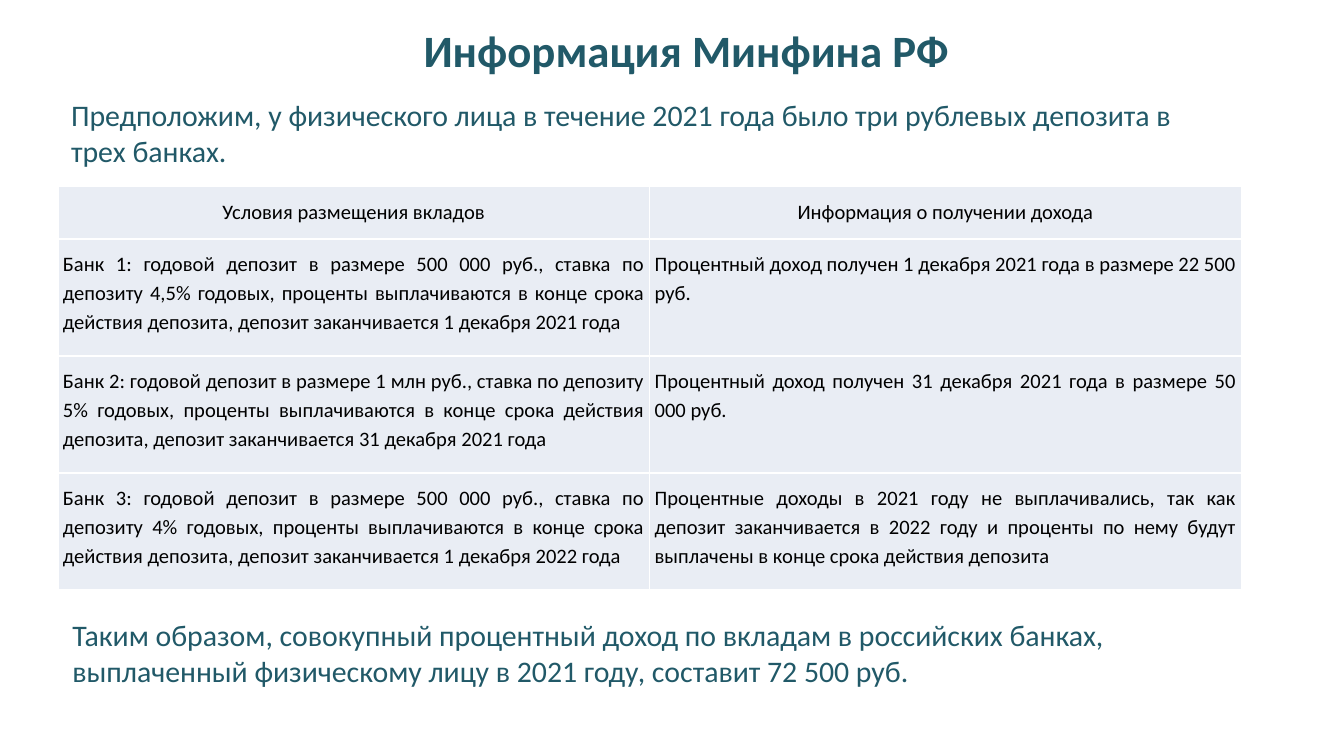
from lxml.etree import SubElement
from pptx import Presentation
from pptx.dml.color import RGBColor as RGB
from pptx.enum.text import MSO_AUTO_SIZE as AutoSize, PP_ALIGN as Align
from pptx.oxml.ns import qn
from pptx.util import Pt

THEME = {
    "font": "Calibri",
    "teal": RGB.from_string("215968"),
    "black": RGB.from_string("000000"),
    "cell": RGB.from_string("E9EDF4"),
    "border": "FFFFFF",
    "title": 24,
    "body": 16,
    "table": 11,
}

TITLE = "Информация Минфина РФ"
INTRO = ("Предположим, у физического лица в течение 2021 года "
         "было три рублевых депозита в трех банках.")
SUMMARY = ("Таким образом, совокупный процентный доход по вкладам в российских банках, "
           "выплаченный физическому лицу в 2021 году, составит 72 500 руб.")
HEADER = ("Условия размещения вкладов", "Информация о получении дохода")
DEPOSITS = [
    ("Банк 1: годовой депозит в размере 500 000 руб., ставка по депозиту 4,5% годовых, "
     "проценты выплачиваются в конце срока действия депозита, "
     "депозит заканчивается 1 декабря 2021 года",
     "Процентный доход получен 1 декабря 2021 года в размере 22 500 руб."),
    ("Банк 2: годовой депозит в размере 1 млн руб., ставка по депозиту 5% годовых, "
     "проценты выплачиваются в конце срока действия депозита, "
     "депозит заканчивается 31 декабря 2021 года",
     "Процентный доход получен 31 декабря 2021 года в размере 50 000 руб."),
    ("Банк 3: годовой депозит в размере 500 000 руб., ставка по депозиту 4% годовых, "
     "проценты выплачиваются в конце срока действия депозита, "
     "депозит заканчивается 1 декабря 2022 года",
     "Процентные доходы в 2021 году не выплачивались, так как депозит заканчивается "
     "в 2022 году и проценты по нему будут выплачены в конце срока действия депозита"),
]

# left, top, width, height in points
TITLE_BOX = (218.2, 8.5, 298.8, 36.3)
INTRO_BOX = (31, 48.5, 620.6, 46)
SUMMARY_BOX = (31.7, 327, 634, 46)
TABLE_LEFT, TABLE_TOP, TABLE_WIDTH = 31, 100, 634
HEADER_HEIGHT, ROW_HEIGHT = 28, 62.7
CELL_PAD_X, CELL_PAD_Y = 2.7, 5


def style(p, size, color, bold=False):
    p.font.name = THEME["font"]
    p.font.size = Pt(size)
    p.font.color.rgb = color
    p.font.bold = bold


def add_text(slide, text, box, size, align=Align.LEFT, bold=False, wrap=True):
    tf = slide.shapes.add_textbox(*map(Pt, box)).text_frame
    tf.word_wrap = wrap
    tf.auto_size = AutoSize.SHAPE_TO_FIT_TEXT
    p = tf.paragraphs[0]
    p.text, p.alignment = text, align
    style(p, size, THEME["teal"], bold)


def add_borders(cell):
    """Draw all four edges; they must come before the fill in the cell XML."""
    tc_pr = cell._tc.get_or_add_tcPr()
    for side in ("lnL", "lnR", "lnT", "lnB"):
        line = SubElement(tc_pr, qn(f"a:{side}"), w=str(Pt(1)))
        fill = SubElement(line, qn("a:solidFill"))
        SubElement(fill, qn("a:srgbClr"), val=THEME["border"])


def fill_cell(cell, text, align):
    add_borders(cell)
    cell.fill.solid()
    cell.fill.fore_color.rgb = THEME["cell"]
    cell.margin_left = cell.margin_right = Pt(CELL_PAD_X)
    cell.margin_top = cell.margin_bottom = Pt(CELL_PAD_Y)
    p = cell.text_frame.paragraphs[0]
    p.text, p.alignment, p.line_spacing = text, align, 1.15
    style(p, THEME["table"], THEME["black"])


def add_deposit_table(slide):
    rows = [HEADER, *DEPOSITS]
    heights = [HEADER_HEIGHT] + [ROW_HEIGHT] * len(DEPOSITS)
    table = slide.shapes.add_table(
        len(rows), len(HEADER), Pt(TABLE_LEFT), Pt(TABLE_TOP),
        Pt(TABLE_WIDTH), Pt(sum(heights))).table
    table.first_row = table.horz_banding = False
    for column in table.columns:
        column.width = Pt(TABLE_WIDTH / len(HEADER))
    for r, (texts, height) in enumerate(zip(rows, heights)):
        table.rows[r].height = Pt(height)
        for c, text in enumerate(texts):
            fill_cell(table.cell(r, c), text, Align.JUSTIFY if r else Align.CENTER)


def main():
    prs = Presentation()
    prs.slide_width, prs.slide_height = Pt(720), Pt(405)
    s = prs.slides.add_slide(prs.slide_layouts[6])
    add_text(s, TITLE, TITLE_BOX, THEME["title"], Align.CENTER, bold=True, wrap=False)
    add_text(s, INTRO, INTRO_BOX, THEME["body"])
    add_deposit_table(s)
    add_text(s, SUMMARY, SUMMARY_BOX, THEME["body"])
    prs.save("out.pptx")


if __name__ == "__main__":
    main()
